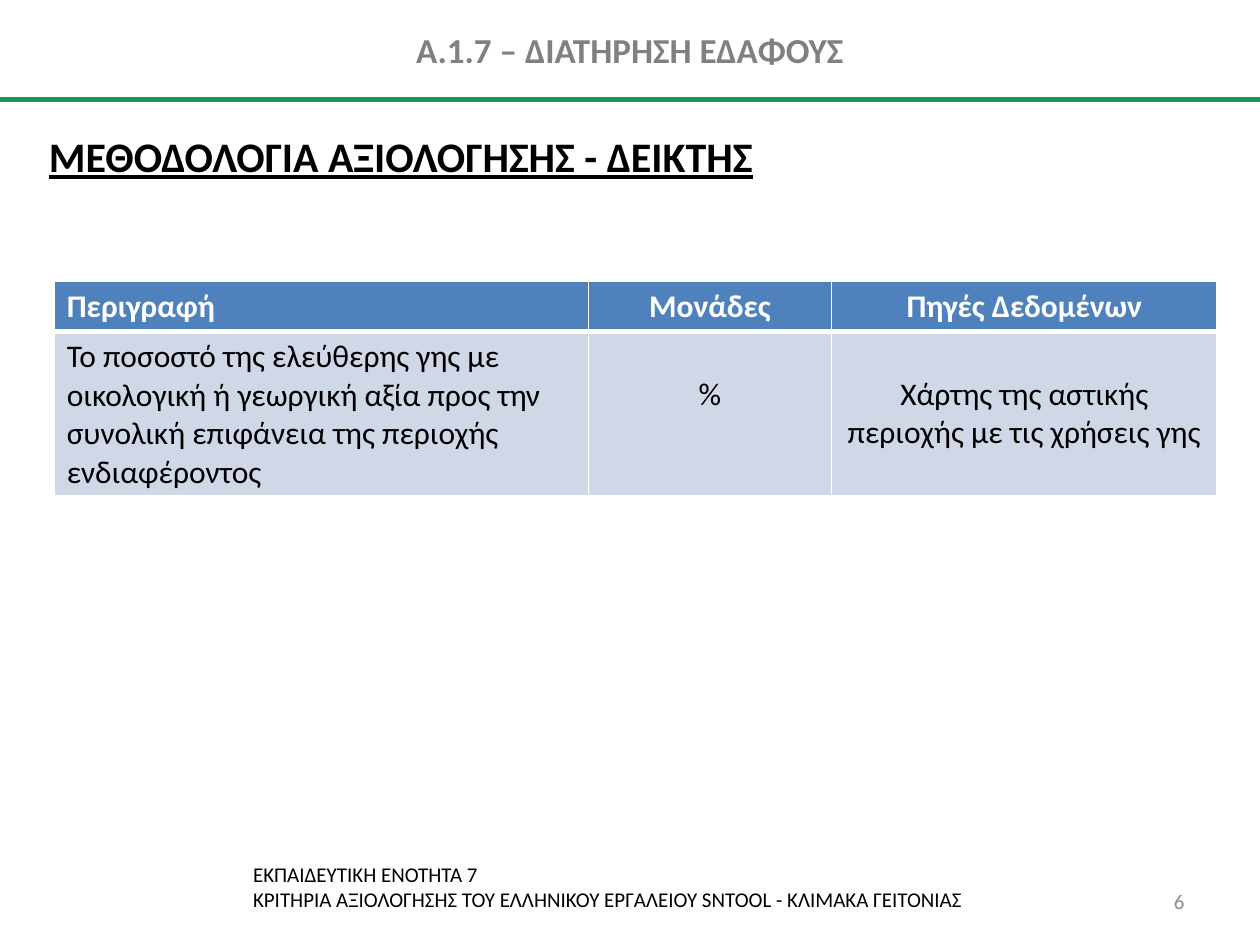
from lxml import etree
from pptx import Presentation
from pptx.dml.color import RGBColor
from pptx.enum.shapes import MSO_CONNECTOR
from pptx.enum.text import MSO_ANCHOR, PP_ALIGN
from pptx.oxml.ns import qn
from pptx.util import Inches, Pt

LEFT, CENTER, RIGHT = PP_ALIGN.LEFT, PP_ALIGN.CENTER, PP_ALIGN.RIGHT
TOP, MIDDLE = MSO_ANCHOR.TOP, MSO_ANCHOR.MIDDLE
STRAIGHT = MSO_CONNECTOR.STRAIGHT
TITLE_ONLY = 5
FONT = "Calibri"
WIDTH, HEIGHT = 10, 7.5
HEADER_HEIGHT = 0.79

COLUMN_WIDTHS = (4.24, 1.93, 3.06)
ROW_HEIGHTS = (0.4, 1.3)
ALIGNMENTS = (LEFT, CENTER, CENTER)
ROWS = (
    ("Περιγραφή", "Μονάδες", "Πηγές Δεδομένων"),
    ("Το ποσοστό της ελεύθερης γης με οικολογική ή γεωργική αξία προς την "
     "συνολική επιφάνεια της περιοχής ενδιαφέροντος",
     "%",
     "Χάρτης της αστικής περιοχής με τις χρήσεις γης"),
)


def color(value):
    return RGBColor.from_string(value)


def write(frame, lines, size, text_color="000000", bold=False,
          underline=False, align=LEFT, anchor=TOP):
    """Fill a text frame with one paragraph, its lines split by breaks."""
    frame.word_wrap = True
    frame.vertical_anchor = anchor
    paragraph = frame.paragraphs[0]
    paragraph.alignment = align
    for index, line in enumerate(lines):
        if index:
            paragraph.add_line_break()
        run = paragraph.add_run()
        run.text = line
        font = run.font
        font.name, font.size = FONT, Pt(size)
        font.bold, font.underline = bold, underline
        font.color.rgb = color(text_color)


def add_text(slide, box, lines, size, **style):
    shape = slide.shapes.add_textbox(*map(Inches, box))
    write(shape.text_frame, lines, size, **style)


def add_header(slide, text):
    title = slide.shapes.title
    title.left, title.top = 0, 0
    title.width, title.height = Inches(WIDTH), Inches(HEADER_HEIGHT)
    write(title.text_frame, [text], 20, text_color="808080", bold=True,
          align=CENTER, anchor=MIDDLE)

    # Green rule under the title
    y = Inches(HEADER_HEIGHT)
    rule = slide.shapes.add_connector(STRAIGHT, 0, y, Inches(WIDTH), y)
    rule.line.color.rgb = color("159961")
    rule.line.width = Pt(3)
    etree.SubElement(rule._element.spPr, qn("a:effectLst"))


def set_borders(cell, **widths):
    """Draw white borders; they must precede the fill in the cell."""
    properties = cell._tc.get_or_add_tcPr()
    for side in ("L", "R", "T", "B"):
        line = etree.SubElement(properties, qn(f"a:ln{side}"),
                                w=str(Pt(widths.get(side, 1))))
        fill = etree.SubElement(line, qn("a:solidFill"))
        etree.SubElement(fill, qn("a:srgbClr"), val="FFFFFF")


def add_indicator_table(slide, left, top):
    frame = slide.shapes.add_table(
        len(ROWS), len(COLUMN_WIDTHS), Inches(left), Inches(top),
        Inches(sum(COLUMN_WIDTHS)), Inches(sum(ROW_HEIGHTS)))
    table = frame.table
    for column, width in zip(table.columns, COLUMN_WIDTHS):
        column.width = Inches(width)
    for row, height in zip(table.rows, ROW_HEIGHTS):
        row.height = Inches(height)

    for row_index, texts in enumerate(ROWS):
        header = row_index == 0
        for column_index, (text, align) in enumerate(zip(texts, ALIGNMENTS)):
            cell = table.cell(row_index, column_index)
            set_borders(cell, **({"B": 3} if header else {"T": 3}))
            cell.fill.solid()
            cell.fill.fore_color.rgb = color("4F81BD" if header else "D0D8E8")
            # Centred body cells start one line lower
            if not header and align == CENTER:
                cell.margin_top = Inches(0.35)
            write(cell.text_frame, [text], 18, bold=header, align=align,
                  text_color="FFFFFF" if header else "000000")


def main():
    presentation = Presentation()
    presentation.slide_width = Inches(WIDTH)
    presentation.slide_height = Inches(HEIGHT)
    slide = presentation.slides.add_slide(
        presentation.slide_layouts[TITLE_ONLY])

    add_header(slide, "Α.1.7 – ΔΙΑΤΗΡΗΣΗ ΕΔΑΦΟΥΣ")
    add_text(slide, (0.29, 0.99, 8.57, 0.58),
             ["ΜΕΘΟΔΟΛΟΓΙΑ ΑΞΙΟΛΟΓΗΣΗΣ - ΔΕΙΚΤΗΣ"], 24,
             bold=True, underline=True)
    add_indicator_table(slide, 0.43, 2.23)

    # Footer and page number
    add_text(slide, (1.91, 6.79, 6.79, 0.5),
             ["ΕΚΠΑΙΔΕΥΤΙΚΗ ΕΝΟΤΗΤΑ 7",
              "ΚΡΙΤΗΡΙΑ ΑΞΙΟΛΟΓΗΣΗΣ ΤΟΥ ΕΛΛΗΝΙΚΟΥ ΕΡΓΑΛΕΙΟΥ SNTOOL - "
              "ΚΛΙΜΑΚΑ ΓΕΙΤΟΝΙΑΣ"], 12)
    add_text(slide, (7.17, 6.95, 2.33, 0.4), ["6"], 12,
             text_color="8C8C8C", align=RIGHT, anchor=MIDDLE)

    presentation.save("out.pptx")


if __name__ == "__main__":
    main()
